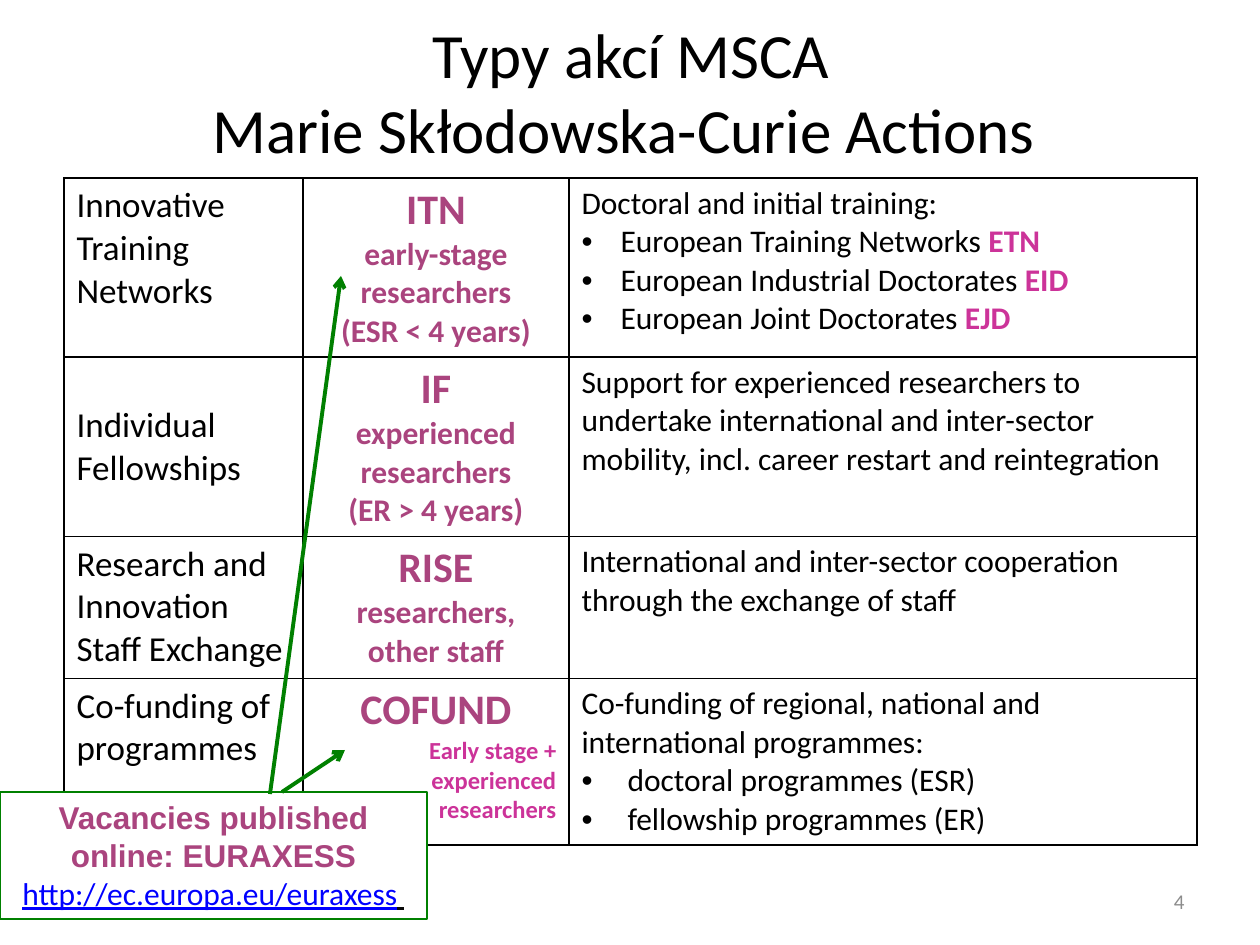
from lxml import etree
from pptx import Presentation
from pptx.dml.color import RGBColor
from pptx.enum.shapes import MSO_CONNECTOR, MSO_SHAPE
from pptx.enum.text import MSO_ANCHOR, MSO_AUTO_SIZE, PP_ALIGN
from pptx.oxml.ns import qn
from pptx.util import Emu, Pt

LEFT, CENTER, RIGHT = PP_ALIGN.LEFT, PP_ALIGN.CENTER, PP_ALIGN.RIGHT
TOP, MIDDLE = MSO_ANCHOR.TOP, MSO_ANCHOR.MIDDLE
STRAIGHT, RECT = MSO_CONNECTOR.STRAIGHT, MSO_SHAPE.RECTANGLE
FIXED = MSO_AUTO_SIZE.NONE
SCALE = 914400 / 126
HEX = {
    "black": "000000", "white": "FFFFFF", "plum": "AA447E", "pink": "CC3399",
    "green": "008000", "blue": "0000FF", "grey": "8C8C8C", "ink": "080808",
}
WIDTHS = (239, 266, 628)
HEIGHTS = (179, 179, 142, 166)


def px(*nums):
    """Turn pixel lengths into EMU."""
    return [Emu(round(num * SCALE)) for num in nums]


def tint(name):
    """Look up a colour by name."""
    return RGBColor.from_string(HEX[name])


def text(para, words, size=18, color="black", bold=False, font="Calibri", line=False):
    """Add words to a paragraph, with a break at each newline."""
    for num, part in enumerate(words.split("\n")):
        if num:
            para.add_line_break()
        run = para.add_run()
        run.text = part
        face = run.font
        face.name, face.size, face.bold = font, Pt(size), bold
        face.underline = line
        face.color.rgb = tint(color)


def label(words):
    """Describe the name of an action."""
    return [(LEFT, 0, [(words, {"size": 20})])]


def code(name, *lines):
    """Describe a short name with centred lines below it."""
    rows = [(name, 24)] + [(line, 18) for line in lines]
    return [(CENTER, 0, [(words, {"size": size, "color": "plum", "bold": True})])
            for words, size in rows]


def notes(lead, items=(), hang=39):
    """Describe a lead line with bullets, each with an optional tag."""
    paras = [(LEFT, 0, [(lead, {})])]
    for words, tag in items:
        runs = [(words, {})]
        if tag:
            runs.append((f" {tag}", {"color": "pink", "bold": True}))
        paras.append((LEFT, hang, runs))
    return paras


def bullet(para, hang):
    """Give a paragraph a bullet and a hanging indent."""
    props = para._p.get_or_add_pPr()
    size = px(hang)[0]
    props.set("marL", str(size))
    props.set("indent", str(-size))
    etree.SubElement(props, qn("a:buFont")).set("typeface", "Arial")
    etree.SubElement(props, qn("a:buChar")).set("char", "•")


def border(cell):
    """Draw thin black lines on all sides of a cell."""
    props = cell._tc.get_or_add_tcPr()
    for num, side in enumerate(("lnL", "lnR", "lnT", "lnB")):
        line = etree.Element(qn(f"a:{side}"), w=str(Pt(1)))
        fill = etree.SubElement(line, qn("a:solidFill"))
        etree.SubElement(fill, qn("a:srgbClr")).set("val", HEX["black"])
        props.insert(num, line)


def fill(cell, paras, anchor):
    """Style a cell and write its paragraphs."""
    cell.fill.solid()
    cell.fill.fore_color.rgb = tint("white")
    border(cell)
    cell.vertical_anchor = anchor
    frame = cell.text_frame
    for num, (align, hang, runs) in enumerate(paras):
        para = frame.add_paragraph() if num else frame.paragraphs[0]
        para.alignment = align
        if hang:
            bullet(para, hang)
        for words, form in runs:
            text(para, words, **form)


def grid(slide, rows):
    """Add the table of actions."""
    size = px(64, 178, sum(WIDTHS), sum(HEIGHTS))
    table = slide.shapes.add_table(len(HEIGHTS), len(WIDTHS), *size).table
    table.first_row = table.horz_banding = False
    for col, width in zip(table.columns, px(*WIDTHS)):
        col.width = width
    for row, high, cells in zip(table.rows, px(*HEIGHTS), rows):
        row.height = high
        for num, (cell, paras) in enumerate(zip(row.cells, cells)):
            mid = num == 0 and cells is rows[1]
            fill(cell, paras, MIDDLE if mid else TOP)


def arrow(slide, *ends):
    """Add a green arrow from one point to another."""
    link = slide.shapes.add_connector(STRAIGHT, *px(*ends))
    link.line.color.rgb = tint("green")
    link.line.width = Pt(2.25)
    etree.SubElement(link.line._get_or_add_ln(), qn("a:tailEnd")).set("type", "arrow")
    etree.SubElement(link._element.spPr, qn("a:effectLst"))


def head(slide):
    """Place and write the title."""
    title = slide.shapes.title
    title.left, title.top, title.width, title.height = px(64, 26, 1134, 130)
    frame = title.text_frame
    frame.auto_size, frame.vertical_anchor = FIXED, MIDDLE
    para = frame.paragraphs[0]
    para.alignment = CENTER
    text(para, "Typy akcí MSCA\nMarie Skłodowska-Curie Actions ", size=36)


def folio(slide):
    """Add the slide number."""
    frame = slide.shapes.add_textbox(*px(903, 876, 294, 50)).text_frame
    frame.word_wrap, frame.vertical_anchor = True, MIDDLE
    para = frame.paragraphs[0]
    para.alignment = RIGHT
    text(para, "4", size=12, color="grey")


def panel(slide):
    """Add the framed panel on vacancies."""
    box = slide.shapes.add_shape(RECT, *px(0, 792, 427, 127))
    box.shadow.inherit = False
    box.fill.solid()
    box.fill.fore_color.rgb = tint("white")
    box.line.color.rgb = tint("green")
    box.line.width = Pt(1.5)
    frame = box.text_frame
    frame.word_wrap, frame.vertical_anchor = True, TOP
    para = frame.paragraphs[0]
    para.alignment = CENTER
    text(para, "Vacancies published online: EURAXESS ", color="plum", bold=True, font="Arial")
    text(para, "http://ec.europa.eu/euraxess", color="blue", line=True)
    text(para, " ", color="ink", line=True)


def main():
    """Build the slide and save it."""
    deck = Presentation()
    deck.slide_width, deck.slide_height = px(1260, 945)
    slide = deck.slides.add_slide(deck.slide_layouts[5])
    early = ("Early stage + experienced researchers",
             {"size": 14, "color": "pink", "bold": True})
    rows = [
        (label("Innovative Training Networks"),
         code("ITN", "early-stage researchers\n(ESR < 4 years)"),
         notes("Doctoral and initial training:",
               [("European Training Networks", "ETN"),
                ("European Industrial Doctorates", "EID"),
                ("European Joint Doctorates", "EJD")])),
        (label("Individual Fellowships"),
         code("IF", "experienced researchers\n(ER > 4 years)"),
         notes("Support for experienced researchers to undertake international and "
               "inter-sector mobility, incl. career restart and reintegration")),
        (label("Research and Innovation Staff Exchange"),
         code("RISE", "researchers,", "other staff"),
         notes("International and inter-sector cooperation through the exchange of staff")),
        (label("Co-funding of programmes"),
         code("COFUND") + [(RIGHT, 0, [early])],
         notes("Co-funding of regional, national and international programmes:",
               [("doctoral programmes (ESR)", ""), ("fellowship programmes (ER)", "")],
               hang=46)),
    ]
    head(slide)
    grid(slide, rows)
    folio(slide)
    panel(slide)
    arrow(slide, 270, 794, 341, 276)
    arrow(slide, 282, 792, 345, 750)
    deck.save("out.pptx")


if __name__ == "__main__":
    main()
